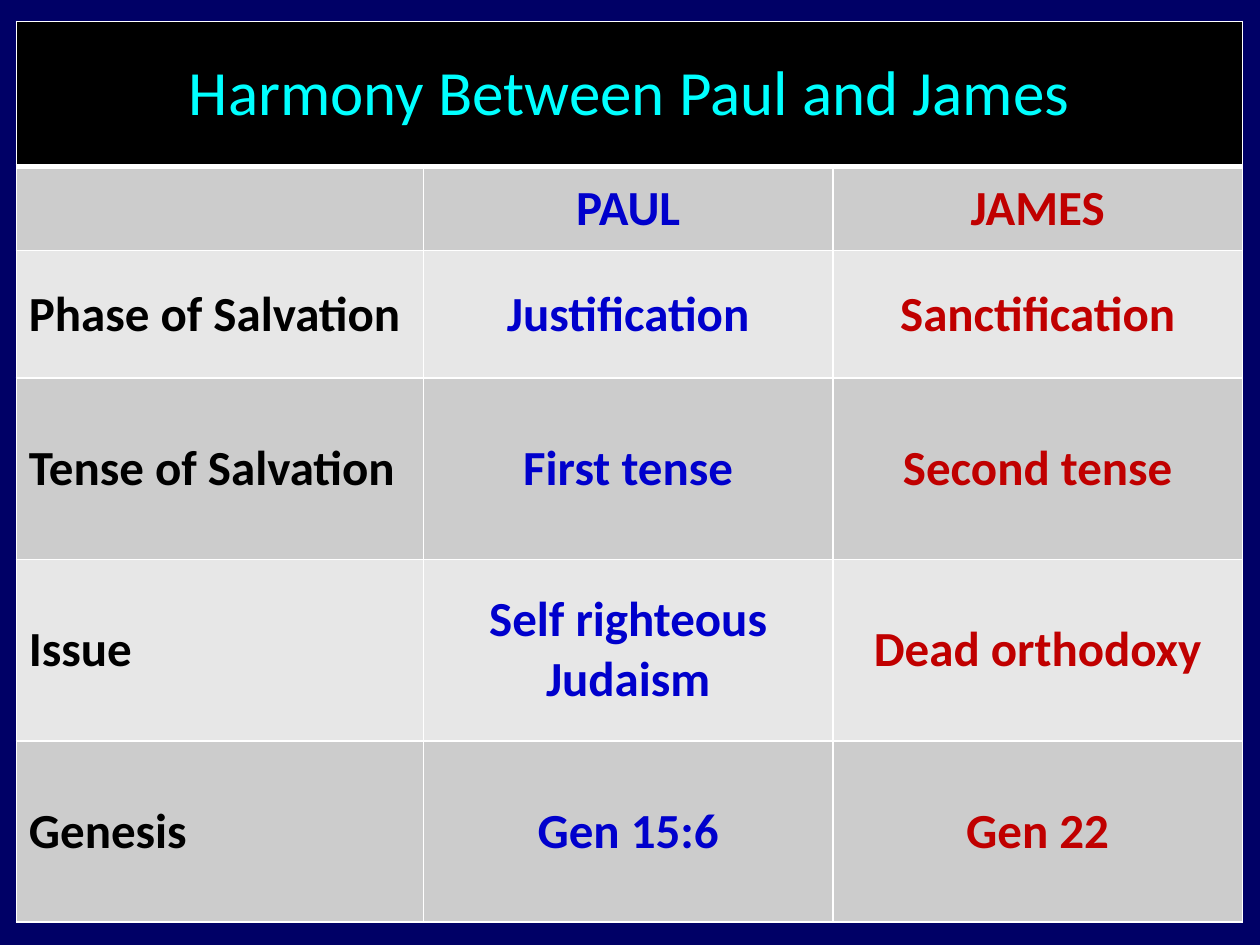
import lxml.etree
import pptx
import pptx.dml.color
import pptx.enum.text
import pptx.oxml.ns
import pptx.util

INK = {
    "back": "000066", "title": "00FFFF", "head": "000000", "label": "000000",
    "paul": "0000CC", "james": "C00000", "dark": "CCCCCC", "light": "E7E7E7",
    "line": "FFFFFF",
}
TITLE = "Harmony Between Paul and James"
ROWS = [
    ("", "PAUL", "JAMES"),
    ("Phase of Salvation", "Justification", "Sanctification"),
    ("Tense of Salvation", "First tense", "Second tense"),
    ("Issue", "Self righteous Judaism", "Dead orthodoxy"),
    ("Genesis", "Gen 15:6", "Gen 22"),
]
WIDE = [3.23, 3.25, 3.25]
HIGH = [1.15, 0.67, 1.01] + [1.44] * 3


def style(cell, fill, edges):
    props = cell._tc.get_or_add_tcPr()
    for side, width in edges.items():
        line = lxml.etree.SubElement(
            props, pptx.oxml.ns.qn("a:ln" + side), w=str(pptx.util.Pt(width)))
        solid = lxml.etree.SubElement(line, pptx.oxml.ns.qn("a:solidFill"))
        lxml.etree.SubElement(
            solid, pptx.oxml.ns.qn("a:srgbClr"), val=INK["line"])
    cell.fill.solid()
    cell.fill.fore_color.rgb = pptx.dml.color.RGBColor.from_string(INK[fill])
    cell.vertical_anchor = pptx.enum.text.MSO_ANCHOR.MIDDLE


def write(cell, text, size, color, bold, align):
    cell.text = text
    para = cell.text_frame.paragraphs[0]
    para.alignment = align
    para.font.name = "Calibri"
    para.font.size = pptx.util.Pt(size)
    para.font.bold = bold
    para.font.color.rgb = pptx.dml.color.RGBColor.from_string(INK[color])


deck = pptx.Presentation()
deck.slide_width = pptx.util.Inches(10)
deck.slide_height = pptx.util.Inches(7.5)
slide = deck.slides.add_slide(deck.slide_layouts[6])
back = slide.background.fill
back.solid()
back.fore_color.rgb = pptx.dml.color.RGBColor.from_string(INK["back"])

grid = slide.shapes.add_table(
    len(HIGH), len(WIDE), pptx.util.Inches(0.13), pptx.util.Inches(0.17),
    pptx.util.Inches(sum(WIDE)), pptx.util.Inches(sum(HIGH))).table
for col, width in zip(grid.columns, WIDE):
    col.width = pptx.util.Inches(width)
for row, height in zip(grid.rows, HIGH):
    row.height = pptx.util.Inches(height)

mid = pptx.enum.text.PP_ALIGN.CENTER
left = pptx.enum.text.PP_ALIGN.LEFT

for cell in grid.rows[0].cells:
    style(cell, "head", {"L": 1, "R": 1, "T": 1, "B": 3})
grid.cell(0, 0).merge(grid.cell(0, len(WIDE) - 1))
write(grid.cell(0, 0), TITLE, 36, "title", False, mid)

for r, texts in enumerate(ROWS, 1):
    fill = "dark" if r % 2 else "light"
    top = 3 if r == 1 else 1
    for c, text in enumerate(texts):
        cell = grid.cell(r, c)
        style(cell, fill, {"L": 1, "R": 1, "T": top, "B": 1})
        color = ("label", "paul", "james")[c]
        write(cell, text, 28, color, True, mid if c else left)

deck.save("out.pptx")
